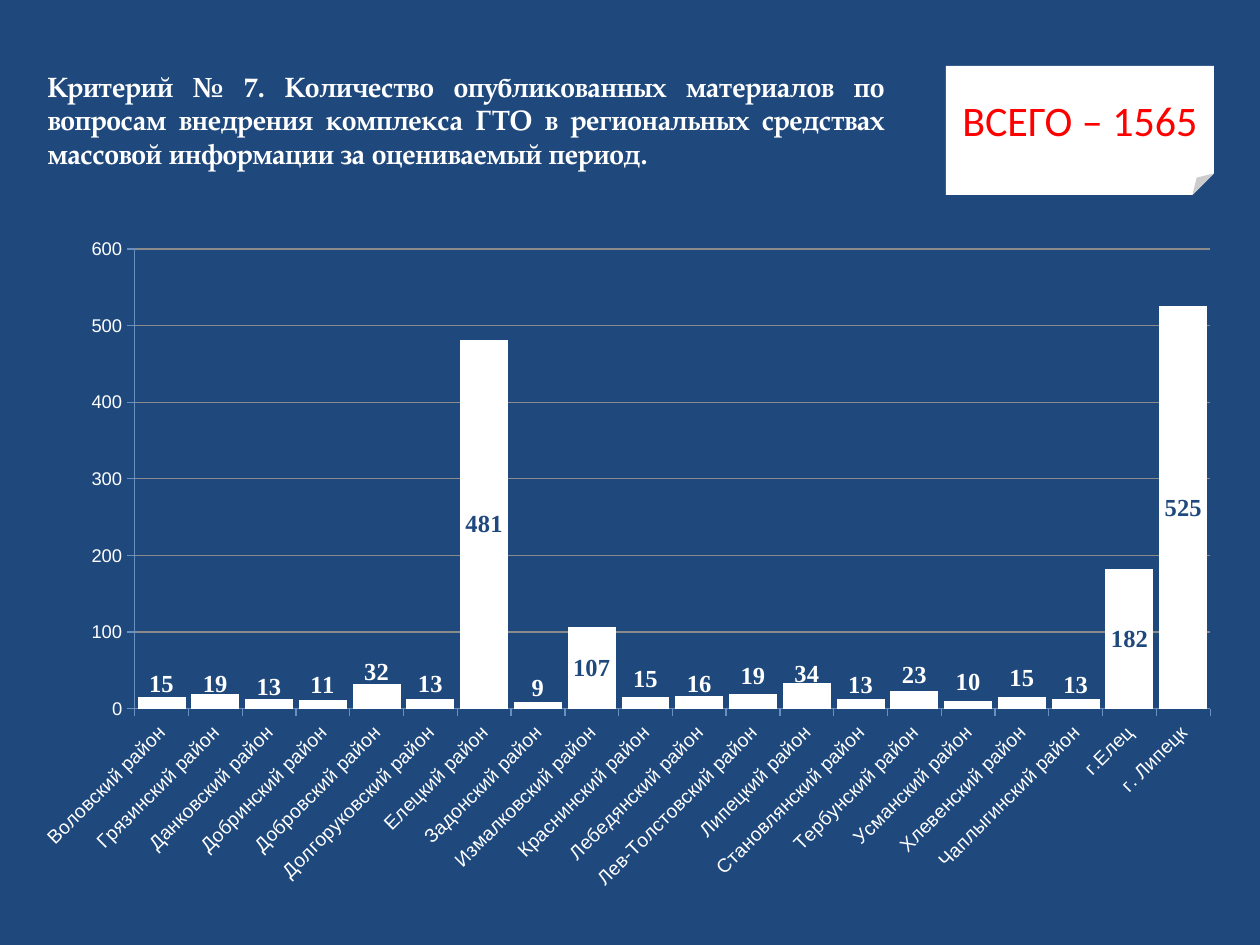
import dataclasses

import pptx
import pptx.chart.data
import pptx.dml.color
import pptx.enum.chart
import pptx.enum.shapes
import pptx.enum.text
import pptx.oxml
import pptx.oxml.ns
import pptx.util

RGB = pptx.dml.color.RGBColor
NAVY = RGB(0x1F, 0x49, 0x7D)
WHITE = RGB(0xFF, 0xFF, 0xFF)
RED = RGB(0xFF, 0x00, 0x00)
GRAY = RGB(0x8B, 0x8B, 0x8B)
BLUE = RGB(0x6A, 0x90, 0xC0)

PX = 914400 // 126


@dataclasses.dataclass
class Box:
    left: int
    top: int
    width: int
    height: int

    def emu(self) -> list[int]:
        return [n * PX for n in dataclasses.astuple(self)]


@dataclasses.dataclass
class Bar:
    name: str
    value: int
    label: int | None = None  # middle of a raised label, px from slide top


TITLE = Box(35, 63, 863, 115)
NOTE = Box(946, 66, 268, 129)
CHART = Box(15, 224, 1221, 679)
PLOT = Box(135, 249, 1076, 460)
TOP = 600

BARS = [
    Bar("Воловский район", 15, 684),
    Bar("Грязинский район", 19, 684),
    Bar("Данковский район", 13, 688),
    Bar("Добринский район", 11, 686),
    Bar("Добровский район", 32, 672),
    Bar("Долгоруковский район", 13, 684),
    Bar("Елецкий район", 481),
    Bar("Задонский район", 9, 688),
    Bar("Измалковский район", 107),
    Bar("Краснинский район", 15, 679),
    Bar("Лебедянский район", 16, 684),
    Bar("Лев-Толстовский район", 19, 676),
    Bar("Липецкий район", 34, 674),
    Bar("Становлянский район", 13, 685),
    Bar("Тербунский район", 23, 675),
    Bar("Усманский район", 10, 683),
    Bar("Хлевенский район", 15, 678),
    Bar("Чаплыгинский район", 13, 685),
    Bar("г.Елец", 182),
    Bar("г. Липецк", 525),
]


def style(font, color: RGB, size: float, name: str, bold: bool = False) -> None:
    font.color.rgb = color
    font.size = pptx.util.Pt(size)
    font.name = name
    font.bold = bold


def layout(**parts: object):
    """Make a manual layout element for a plot area or a label."""
    tags = "".join(f'<c:{tag} val="{val}"/>' for tag, val in parts.items())
    space = pptx.oxml.ns.nsdecls("c")
    return pptx.oxml.parse_xml(
        f"<c:layout {space}><c:manualLayout>{tags}</c:manualLayout></c:layout>")


def fill_back(holder, first: bool = False) -> None:
    """Paint a chart area navy, without an outline."""
    xml = pptx.oxml.parse_xml(
        f'<c:spPr {pptx.oxml.ns.nsdecls("c", "a")}><a:solidFill>'
        f'<a:srgbClr val="{NAVY}"/></a:solidFill><a:ln><a:noFill/></a:ln></c:spPr>')
    if first:
        holder.find(pptx.oxml.ns.qn("c:chart")).addnext(xml)
    else:
        holder.append(xml)


def set_axis(axis, size: float) -> None:
    style(axis.tick_labels.font, WHITE, size, "Arial")
    axis.major_tick_mark = pptx.enum.chart.XL_TICK_MARK.OUTSIDE
    axis.format.line.color.rgb = BLUE
    axis.format.line.width = pptx.util.Pt(0.75)


def raise_label(series, spot: int, bar: Bar) -> None:
    style(series.points[spot].data_label.font, WHITE, 14, "Times New Roman", True)
    base = PLOT.top + PLOT.height * (1 - bar.value / TOP / 2)
    shift = round((bar.label - base) / CHART.height, 3)
    node = series._element.xpath(f"c:dLbls/c:dLbl[c:idx/@val='{spot}']")[0]
    for old in node.xpath("c:layout"):
        node.remove(old)
    node.xpath("c:idx")[0].addnext(layout(x=0, y=shift))


def draw_title(slide) -> None:
    title = slide.shapes.title
    title.left, title.top, title.width, title.height = TITLE.emu()
    frame = title.text_frame
    frame.text = ("Критерий № 7. Количество опубликованных материалов по вопросам "
                  "внедрения комплекса ГТО в региональных средствах массовой "
                  "информации за оцениваемый период.")
    frame.auto_size = pptx.enum.text.MSO_AUTO_SIZE.SHAPE_TO_FIT_TEXT
    frame.vertical_anchor = pptx.enum.text.MSO_ANCHOR.TOP
    para = frame.paragraphs[0]
    para.alignment = pptx.enum.text.PP_ALIGN.JUSTIFY
    style(para.font, WHITE, 16, "TeX Gyre Pagella", True)


def draw_note(slide) -> None:
    note = slide.shapes.add_shape(
        pptx.enum.shapes.MSO_SHAPE.FOLDED_CORNER, *NOTE.emu())
    note.shadow.inherit = False
    note.fill.solid()
    note.fill.fore_color.rgb = WHITE
    note.line.fill.background()
    frame = note.text_frame
    frame.text = "ВСЕГО – 1565"
    frame.vertical_anchor = pptx.enum.text.MSO_ANCHOR.MIDDLE
    para = frame.paragraphs[0]
    para.alignment = pptx.enum.text.PP_ALIGN.CENTER
    style(para.font, RED, 24, "Calibri")


def draw_chart(slide) -> None:
    data = pptx.chart.data.CategoryChartData(number_format="0")
    data.categories = [bar.name for bar in BARS]
    data.add_series("Series 1", [bar.value for bar in BARS])
    kind = pptx.enum.chart.XL_CHART_TYPE.COLUMN_STACKED
    chart = slide.shapes.add_chart(kind, *CHART.emu(), data).chart
    chart.has_legend = False
    chart.has_title = False
    chart.font.size = pptx.util.Pt(14)
    chart.font.name = "Times New Roman"

    # Axes
    set_axis(chart.category_axis, 11)
    body = chart.category_axis._element.xpath("c:txPr/a:bodyPr")[0]
    body.set("rot", str(-45 * 60000))
    axis = chart.value_axis
    set_axis(axis, 10.5)
    axis.minimum_scale, axis.maximum_scale, axis.major_unit = 0, TOP, 100
    axis.tick_labels.number_format = "0"
    axis.tick_labels.number_format_is_linked = False
    axis.has_major_gridlines = True
    axis.major_gridlines.format.line.color.rgb = GRAY
    axis.major_gridlines.format.line.width = pptx.util.Pt(0.75)

    # Columns and labels
    plot = chart.plots[0]
    plot.gap_width, plot.overlap = 12, 100
    plot.vary_by_categories = False
    series = plot.series[0]
    series.format.fill.solid()
    series.format.fill.fore_color.rgb = WHITE
    labels = series.data_labels
    labels.show_value = True
    labels.number_format = "0"
    labels.number_format_is_linked = False
    style(labels.font, NAVY, 14, "Times New Roman", True)
    for spot, bar in enumerate(BARS):
        if bar.label is not None:
            raise_label(series, spot, bar)

    # Plot place and background
    root = chart._chartSpace
    area = root.xpath("c:chart/c:plotArea")[0]
    for old in area.xpath("c:layout"):
        area.remove(old)
    area.insert(0, layout(
        layoutTarget="inner", xMode="edge", yMode="edge",
        x=round((PLOT.left - CHART.left) / CHART.width, 3),
        y=round((PLOT.top - CHART.top) / CHART.height, 3),
        w=round(PLOT.width / CHART.width, 3),
        h=round(PLOT.height / CHART.height, 3)))
    fill_back(area)
    fill_back(root, first=True)


def main() -> None:
    deck = pptx.Presentation()
    deck.slide_width = pptx.util.Inches(10)
    deck.slide_height = pptx.util.Inches(7.5)
    slide = deck.slides.add_slide(deck.slide_layouts.get_by_name("Title Only"))
    slide.background.fill.solid()
    slide.background.fill.fore_color.rgb = NAVY
    draw_title(slide)
    draw_note(slide)
    draw_chart(slide)
    deck.save("out.pptx")


if __name__ == "__main__":
    main()
